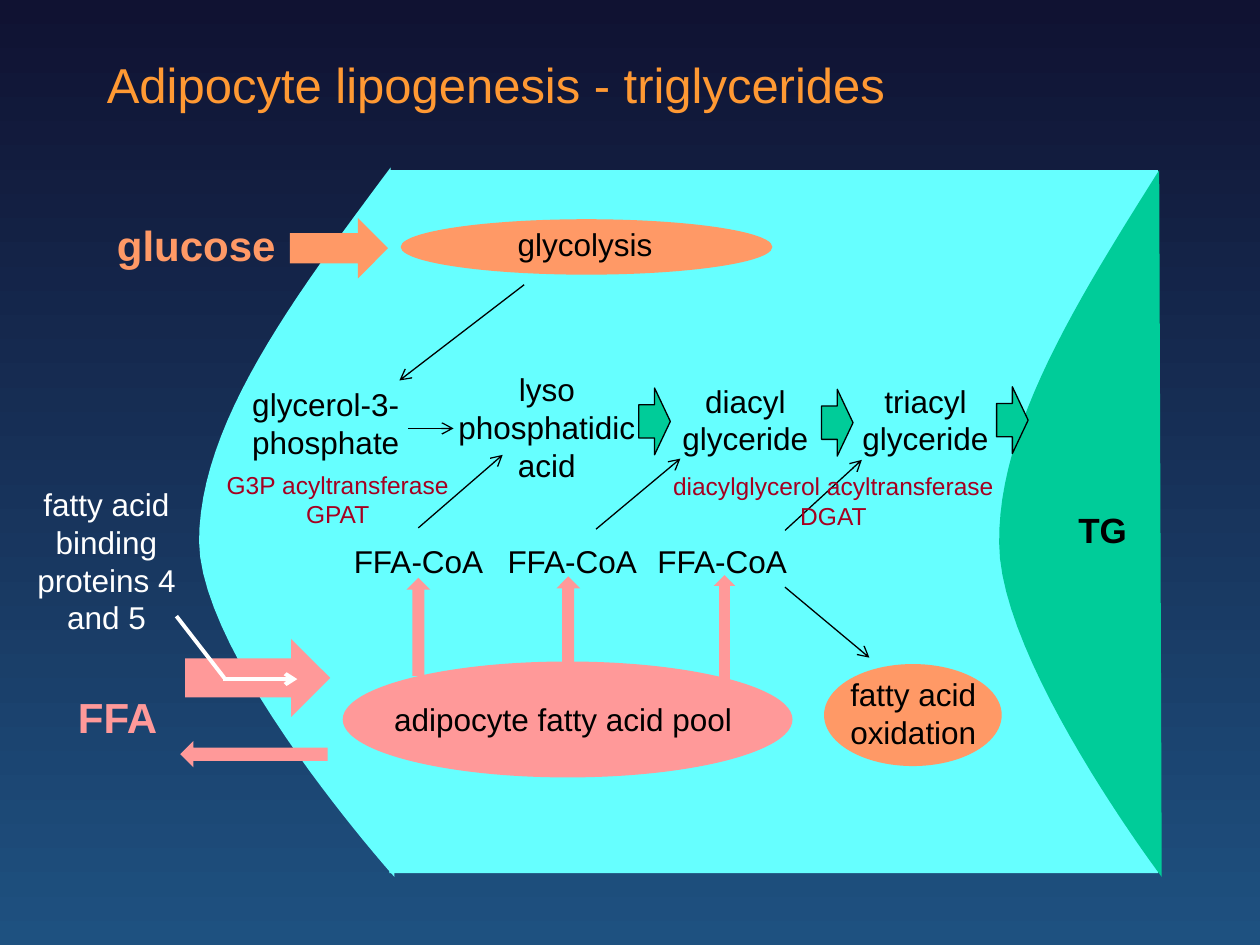
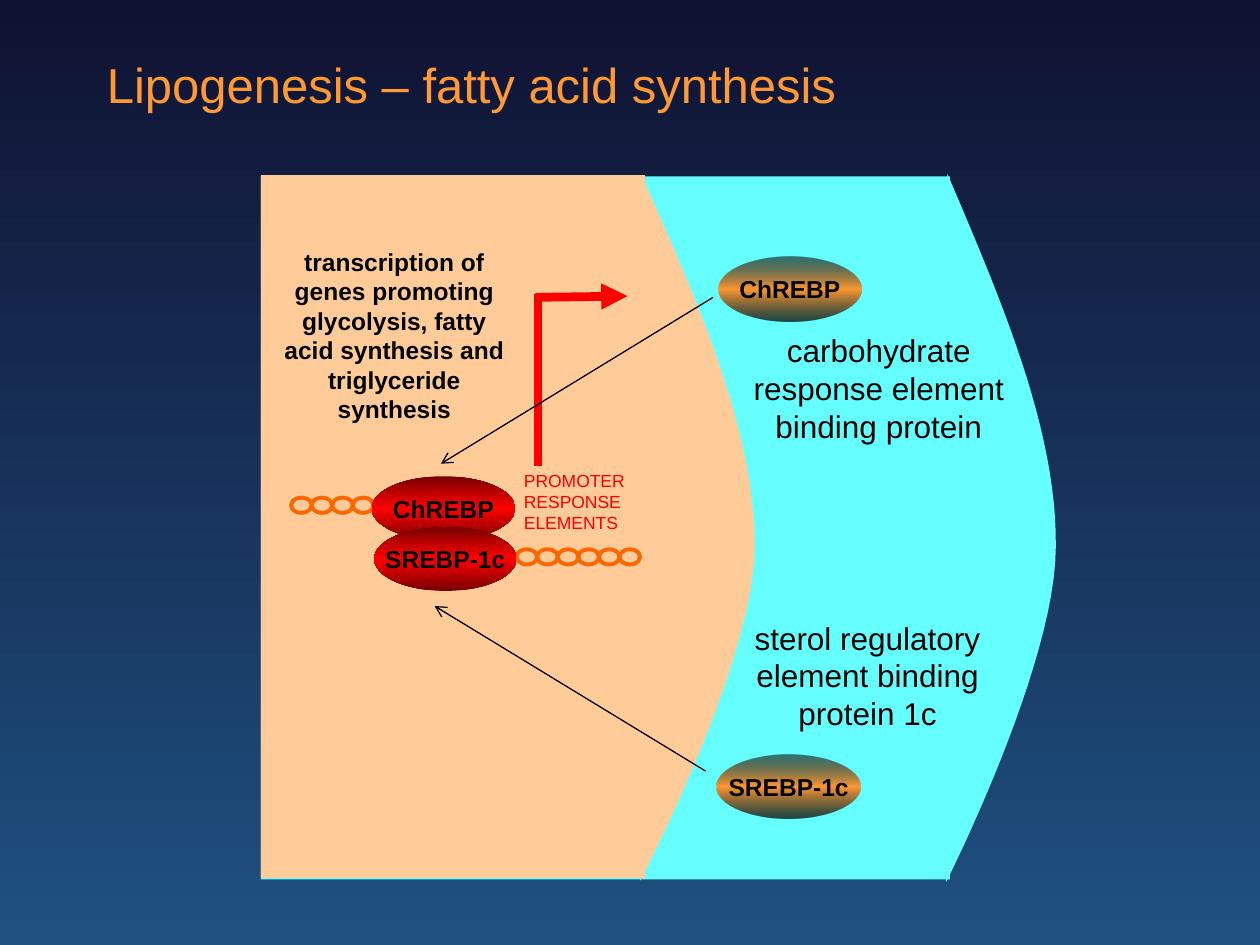
from pptx import Presentation
from pptx.dml.color import RGBColor
from pptx.enum import shapes, text
from pptx.oxml import ns
from pptx.util import Inches, Pt
from lxml import etree

NIGHT = RGBColor(0x10, 0x12, 0x32)
OCEAN = RGBColor(0x1E, 0x51, 0x80)
GOLD = RGBColor(0xFF, 0x99, 0x33)
CYAN = RGBColor(0x66, 0xFF, 0xFF)
GREEN = RGBColor(0x00, 0xCC, 0x99)
PINK = RGBColor(0xFF, 0x99, 0x99)
CORAL = RGBColor(0xFF, 0x99, 0x66)
PEACH = RGBColor(0xFF, 0xCC, 0x99)
ORANGE = RGBColor(0xFF, 0x66, 0x00)
CRIMSON = RGBColor(0xA5, 0x00, 0x21)
RED = RGBColor(0xFF, 0x00, 0x00)
MAROON = RGBColor(0x76, 0x00, 0x00)
BLACK = RGBColor(0x00, 0x00, 0x00)
WHITE = RGBColor(0xFF, 0xFF, 0xFF)

FONT = "Arial"
OVAL = shapes.MSO_SHAPE.OVAL
ARROW = shapes.MSO_SHAPE.RIGHT_ARROW
RECTANGLE = shapes.MSO_SHAPE.RECTANGLE
LEFT = text.PP_ALIGN.LEFT
CENTER = text.PP_ALIGN.CENTER
BOUND = [(0, MAROON, 100), (50, RED, 100), (100, MAROON, 100)]
FREE = [(0, BLACK, 54), (50, GOLD, 100), (100, BLACK, 72)]


def paint_gradient(fill, element, stops):
    fill.gradient()
    fill.gradient_angle = 270
    stop_list = next(element.iter(ns.qn("a:gsLst")))
    for stop in list(stop_list):
        stop_list.remove(stop)
    for position, color, opacity in stops:
        stop = etree.SubElement(stop_list, ns.qn("a:gs"), pos=str(position * 1000))
        tint = etree.SubElement(stop, ns.qn("a:srgbClr"), val=str(color))
        if opacity < 100:
            etree.SubElement(tint, ns.qn("a:alpha"), val=str(opacity * 1000))


def format_text(frame, words, size, color, bold, align, wrap):
    frame.text = words
    frame.word_wrap = wrap
    for para in frame.paragraphs:
        para.alignment = align
        for span in para.runs:
            span.font.name = FONT
            span.font.size = Pt(size)
            span.font.bold = bold
            span.font.color.rgb = color


def bezier(start, first, second, end, steps=24):
    for step in range(1, steps + 1):
        t = step / steps
        yield tuple((1 - t) ** 3 * a + 3 * (1 - t) ** 2 * t * b + 3 * (1 - t) * t ** 2 * c + t ** 3 * d
                    for a, b, c, d in zip(start, first, second, end))


class Region:
    def __init__(self, page, left, top):
        self.shapes = page.shapes
        self.left, self.top = left, top

    def point(self, x, y):
        return Inches(self.left + x), Inches(self.top + y)

    def frame(self, box):
        x, y, width, height = box
        return *self.point(x, y), Inches(width), Inches(height)

    def label(self, box, words, size=18, color=BLACK, bold=False, align=CENTER, wrap=True):
        textbox = self.shapes.add_textbox(*self.frame(box))
        format_text(textbox.text_frame, words, size, color, bold, align, wrap)

    def line_of_text(self, box, words, size=18, color=BLACK, bold=False):
        self.label(box, words, size, color, bold, LEFT, False)

    def shape(self, kind, box, fill=None, line=None, weight=0.75, turn=0, parent=None):
        item = (parent or self).shapes.add_shape(kind, *self.frame(box))
        return self.finish(item, fill, line, weight, turn)

    def finish(self, item, fill, line=None, weight=0.75, turn=0):
        item.shadow.inherit = False
        item.rotation = turn
        if fill is None:
            item.fill.background()
        elif isinstance(fill, list):
            paint_gradient(item.fill, item._element, fill)
        else:
            item.fill.solid()
            item.fill.fore_color.rgb = fill
        if line is None:
            item.line.fill.background()
        else:
            item.line.color.rgb = line
            item.line.width = Pt(weight)
        return item

    def protein(self, box, name, fill):
        oval = self.shape(OVAL, box, fill)
        oval.text_frame.vertical_anchor = text.MSO_ANCHOR.MIDDLE
        format_text(oval.text_frame, name, 14, BLACK, True, CENTER, False)

    def membrane(self, fill, start, *curves):
        builder = self.shapes.build_freeform(*self.point(*start), scale=1.0)
        outline = []
        for curve in curves:
            outline += [self.point(*spot) for spot in bezier(start, *curve)]
            start = curve[-1]
        builder.add_line_segments(outline, close=True)
        self.finish(builder.convert_to_shape(), fill)

    def line(self, start, end, color=BLACK, weight=0.75, tip="arrow"):
        connector = self.shapes.add_connector(
            shapes.MSO_CONNECTOR.STRAIGHT, *self.point(*start), *self.point(*end))
        connector.line.color.rgb = color
        connector.line.width = Pt(weight)
        properties = connector._element.spPr
        if tip:
            etree.SubElement(properties.find(ns.qn("a:ln")), ns.qn("a:tailEnd"), type=tip)
        etree.SubElement(properties, ns.qn("a:effectLst"))


def start_page(deck, title, width):
    page = deck.slides.add_slide(deck.slide_layouts[6])
    paint_gradient(page.background.fill, page._element, [(0, NIGHT, 100), (100, OCEAN, 100)])
    Region(page, 0.75, 0.38).line_of_text((0, 0, width, 0.57), title, 28, GOLD)
    return page


def draw_adipocyte(cell):
    cell.shape(RECTANGLE, (1.59, 0, 6.1, 5.58), CYAN)
    cell.membrane(CYAN, (1.6, -0.02), ((0.84, 1), (0.08, 2.01), (0.08, 2.95)),
                  ((0.09, 3.89), (1.63, 5.61), (1.63, 5.61)))
    cell.membrane(GREEN, (7.7, 0), ((7.06, 1.02), (6.42, 2.03), (6.43, 2.96)),
                  ((6.43, 3.9), (7.72, 5.61), (7.72, 5.61)))
    cell.line_of_text((6.96, 2.64, 0.59, 0.44), "TG", 20, bold=True)


def draw_glucose_entry(entry):
    entry.line_of_text((0.03, 0, 1.47, 0.51), "glucose", 24, CORAL, True)
    entry.shape(ARROW, (1.5, 0.04, 0.78, 0.48), CORAL)
    entry.shape(OVAL, (2.38, 0.05, 2.95, 0.44), CORAL)
    entry.line_of_text((3.21, 0.05, 1.28, 0.4), "glycolysis")
    entry.line((3.36, 0.57), (2.37, 1.33))


def draw_fatty_acid_pool(pool):
    pool.shape(OVAL, (0.02, 1, 3.57, 0.92), PINK)
    for left in (0.01, 1.23, 2.42):
        pool.line_of_text((left, 0, 1.24, 0.4), "FFA-CoA")
    for box in ((0.23, 0.63, 0.78, 0.19), (1.42, 0.62, 0.78, 0.19), (2.61, 0.67, 0.88, 0.17)):
        pool.shape(ARROW, box, PINK, turn=270)
    pool.line_of_text((0.33, 1.26, 2.91, 0.4), "adipocyte fatty acid pool")
    pool.line((3.53, 0.41), (4.2, 0.97))
    pool.shape(OVAL, (3.84, 1.02, 1.41, 0.81), CORAL)
    pool.label((3.95, 1.06, 1.23, 0.71), "fatty acid oxidation", align=LEFT)


def draw_glyceride_chain(chain):
    chain.label((0.24, 0.11, 1.49, 0.71), "glycerol-3- phosphate")
    chain.label((1.88, -0.01, 1.72, 1.01), "lyso\nphosphatidic acid")
    chain.label((3.57, 0.08, 1.49, 0.71), "diacyl\nglyceride")
    chain.label((5, 0.08, 1.49, 0.71), "triacyl\nglyceride")
    for left, top in ((3.47, 0.18), (4.92, 0.19), (6.31, 0.17)):
        chain.shape(ARROW, (left, top, 0.25, 0.53), GREEN, BLACK)
    for start, end in (((1.64, 0.5), (2, 0.5)), ((1.72, 1.29), (2.39, 0.71)),
                       ((3.13, 1.3), (3.8, 0.74)), ((4.63, 1.31), (5.24, 0.75))):
        chain.line(start, end)
    chain.label((3.56, 0.79, 2.91, 0.57), "diacylglycerol acyltransferase\nDGAT", 14, CRIMSON)
    chain.label((-0.01, 0.78, 2.18, 0.57), "G3P acyltransferase\nGPAT", 14, CRIMSON)


def draw_fatty_acid_exchange(exchange):
    exchange.label((0, 0, 1.69, 1.31), "fatty acid binding proteins 4 and 5", color=WHITE)
    exchange.line_of_text((0.52, 1.64, 0.84, 0.51), "FFA", 24, PINK, True)
    exchange.shape(ARROW, (1.47, 1.27, 1.15, 0.62), PINK)
    exchange.shape(ARROW, (1.43, 2.08, 1.17, 0.21), PINK, turn=180)
    exchange.line((1.78, 1.58), (1.4, 1.09), WHITE, 2.25, None)
    exchange.line((1.77, 1.59), (2.36, 1.59), WHITE, 2.25)


def draw_nucleus(cell):
    cell.shape(RECTANGLE, (0, 0.01, 5.47, 5.58), CYAN)
    cell.membrane(CYAN, (5.45, -0.01), ((5.88, 1), (6.32, 2.02), (6.31, 2.95)),
                  ((6.31, 3.89), (5.44, 5.61), (5.44, 5.61)))
    cell.membrane(PEACH, (3.02, 0), ((3.47, 1.01), (3.92, 2.02), (3.92, 2.95)),
                  ((3.91, 3.89), (3.01, 5.6), (3.01, 5.6)))
    cell.shape(RECTANGLE, (0, 0, 3.05, 5.58), PEACH)


def draw_dna(strand, turns=6, width=0.98):
    helix = strand.shapes.add_group_shape()
    pitch = width / turns
    for turn in range(turns):
        strand.shape(OVAL, (turn * pitch, 0, pitch, 0.12), None, ORANGE, 2.25, parent=helix)


def draw_promoter(promoter):
    promoter.line((2.17, 0.43), (2.17, 1.8), RED, 5, None)
    promoter.line((2.15, 0.46), (2.88, 0.45), RED, 5, "triangle")
    promoter.label((0.03, 0.01, 2, 1.51), "transcription of genes promoting glycolysis, "
                   "fatty acid synthesis and triglyceride synthesis", 14, bold=True)
    promoter.protein((0.85, 1.88, 1.14, 0.51), "ChREBP", BOUND)
    promoter.protein((0.87, 2.28, 1.13, 0.51), "SREBP-1c", BOUND)
    promoter.label((1.96, 1.78, 1.18, 0.61), "PROMOTER RESPONSE ELEMENTS", 10, RED, align=LEFT)


def draw_binding_proteins(cytosol):
    cytosol.protein((0.1, 0.04, 1.14, 0.51), "ChREBP", FREE)
    cytosol.label((0.26, 0.58, 2.23, 1.01), "carbohydrate response element binding protein")
    cytosol.label((0.17, 2.86, 2.23, 1.01), "sterol regulatory element binding protein 1c")
    cytosol.protein((0.09, 3.99, 1.14, 0.51), "SREBP-1c", FREE)
    cytosol.line((0.06, 0.36), (-2.1, 1.68))
    cytosol.line((0, 4.12), (-2.15, 2.81))


def build_triglyceride_page(deck):
    page = start_page(deck, "Adipocyte lipogenesis - triglycerides", 6.68)
    draw_adipocyte(Region(page, 1.5, 1.35))
    draw_glucose_entry(Region(page, 0.8, 1.69))
    draw_fatty_acid_pool(Region(page, 2.7, 4.25))
    draw_glyceride_chain(Region(page, 1.6, 2.9))
    draw_fatty_acid_exchange(Region(page, 0, 3.8))


def build_synthesis_page(deck):
    page = start_page(deck, "Lipogenesis – fatty acid synthesis", 6.06)
    draw_nucleus(Region(page, 2.07, 1.39))
    draw_dna(Region(page, 4.1, 4.36))
    draw_dna(Region(page, 2.31, 3.95))
    draw_promoter(Region(page, 2.1, 1.9))
    draw_binding_proteins(Region(page, 5.6, 2))


def main():
    deck = Presentation()
    deck.slide_width, deck.slide_height = Inches(10), Inches(7.5)
    build_triglyceride_page(deck)
    build_synthesis_page(deck)
    deck.save("out.pptx")


if __name__ == "__main__":
    main()
